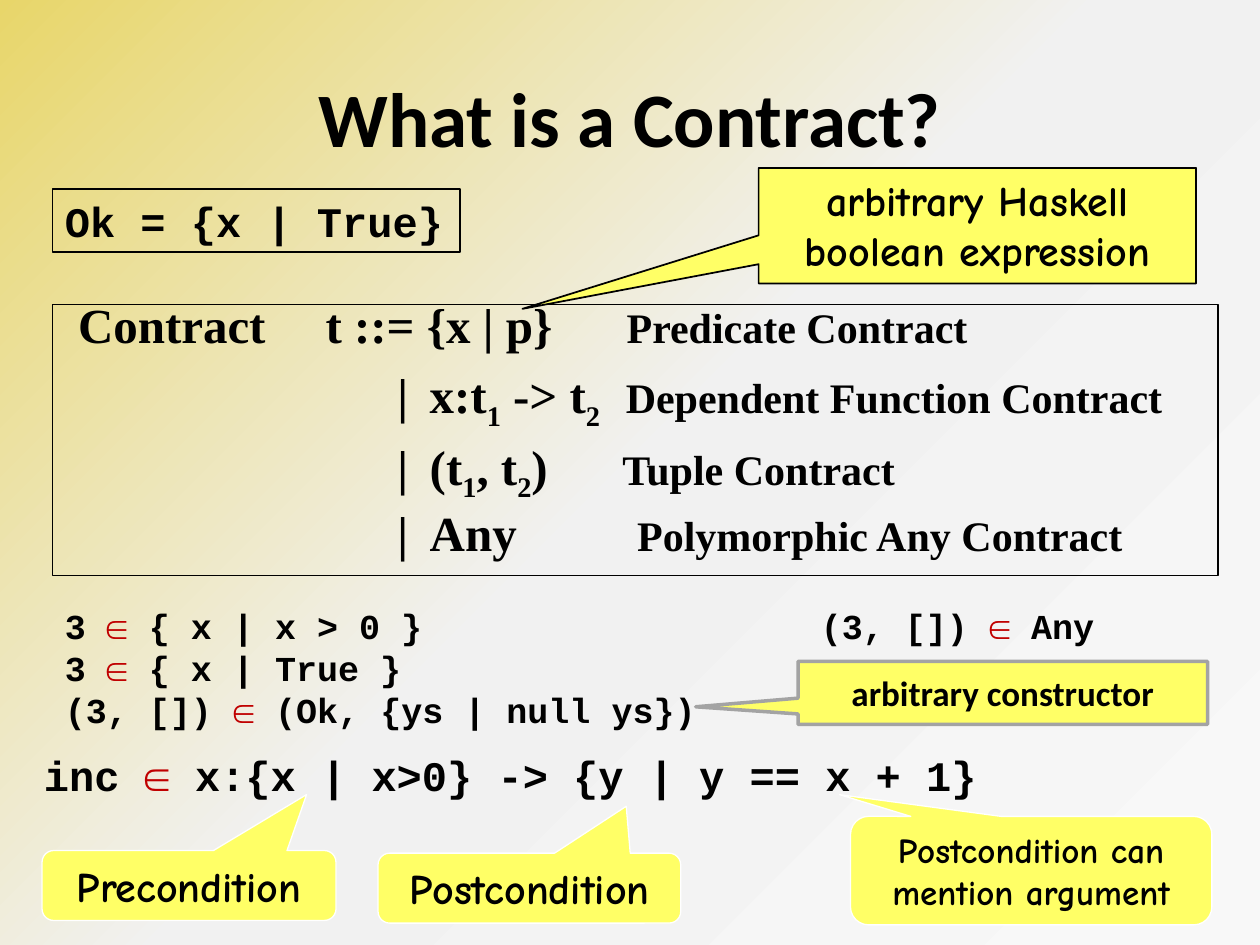
from copy import deepcopy

from pptx import Presentation
from pptx import util as u
from pptx.dml.color import RGBColor
from pptx.enum import shapes, text
from pptx.oxml import ns
from pptx.oxml import xmlchemy

BLACK = RGBColor(0x00, 0x00, 0x00)
WHITE = RGBColor(0xFF, 0xFF, 0xFF)
GREY = RGBColor(0xA3, 0xA3, 0xA3)
RED = RGBColor(0xC0, 0x00, 0x00)
YELLOW = RGBColor(0xFF, 0xFF, 0x66)
BACKGROUND_STOPS = [
    (0, RGBColor(0xE8, 0xD6, 0x6A)),
    (0.5, RGBColor(0xF1, 0xF1, 0xF1)),
    (1, RGBColor(0xF8, 0xF8, 0xF8)),
]

SANS, COMIC, MONO, SERIF = "Calibri", "Comic Neue", "Courier New", "Times New Roman"
RECTANGLE = shapes.MSO_SHAPE.RECTANGLE
SQUARE_CALLOUT = shapes.MSO_SHAPE.RECTANGULAR_CALLOUT
ROUND_CALLOUT = shapes.MSO_SHAPE.ROUNDED_RECTANGULAR_CALLOUT
TOP, MIDDLE = text.MSO_ANCHOR.TOP, text.MSO_ANCHOR.MIDDLE
LEFT, CENTER = text.PP_ALIGN.LEFT, text.PP_ALIGN.CENTER

# Text before the description, the description, and where each part starts.
GRAMMAR = [
    ("\tContract\tt ::= {x | p}", "Predicate Contract", (7.5, 149, 321)),
    ("\t|\tx:t^1^ -> t^2^", "Dependent Function Contract", (190, 208.5, 320.5)),
    ("\t|\t(t^1^, t^2^)", "Tuple Contract", (190, 208.5, 318.5)),
    ("\t|\tAny", "Polymorphic Any Contract", (190, 208.5, 327)),
]
MEMBERSHIPS = [
    "3 ^∈^ { x | x > 0 }\t(3, []) ^∈^ Any",
    "3 ^∈^ { x | True }",
    "(3, []) ^∈^ (Ok, {ys | null ys})",
]


def subscript(run):
    run._r.get_or_add_rPr().set("baseline", "-25000")


def redden(run):
    run.font.color.rgb = RED


def add_marked_runs(paragraph, line, mark):
    """Add the line as runs, applying mark to each part between carets."""
    for index, part in enumerate(line.split("^")):
        if part:
            run = paragraph.add_run()
            run.text = part
            if index % 2:
                mark(run)


def set_tabs(paragraph, positions):
    tab_list = xmlchemy.OxmlElement("a:tabLst")
    for position in positions:
        tab = xmlchemy.OxmlElement("a:tab")
        tab.set("pos", str(u.Pt(position)))
        tab.set("algn", "l")
        tab_list.append(tab)
    paragraph._p.get_or_add_pPr().append(tab_list)


class ContractSlide:
    def __init__(self, presentation):
        self.slide = presentation.slides.add_slide(presentation.slide_layouts[5])

    def background(self, stops):
        fill = self.slide.background.fill
        fill.gradient()
        fill.gradient_angle = 315
        stop_list = self.slide._element.find(".//" + ns.qn("a:gsLst"))
        while len(stop_list) < len(stops):
            stop_list.append(deepcopy(stop_list[0]))
        for stop, (position, color) in zip(fill.gradient_stops, stops):
            stop.position = position
            stop.color.rgb = color

    def style(self, paragraph, font_name, size, align=LEFT):
        paragraph.alignment = align
        font = paragraph.font
        font.name, font.size, font.bold = font_name, u.Pt(size), True
        font.color.rgb = BLACK

    def title(self, words, bounds):
        title = self.slide.shapes.title
        title.left, title.top, title.width, title.height = map(u.Pt, bounds)
        title.text_frame.text = words
        title.text_frame.vertical_anchor = MIDDLE
        self.style(title.text_frame.paragraphs[0], SANS, 44, CENTER)

    def box(self, kind, bounds, line, line_width, fill=None, anchor=TOP):
        shape = self.slide.shapes.add_shape(kind, *map(u.Pt, bounds))
        shape.shadow.inherit = False
        if fill is None:
            shape.fill.background()
        else:
            shape.fill.solid()
            shape.fill.fore_color.rgb = fill
        shape.line.color.rgb = line
        shape.line.width = u.Pt(line_width)
        shape.text_frame.word_wrap = True
        shape.text_frame.vertical_anchor = anchor
        return shape

    def framed_code(self, words, bounds):
        paragraph = self.box(RECTANGLE, bounds, BLACK, 1).text_frame.paragraphs[0]
        paragraph.text = words
        self.style(paragraph, MONO, 24)

    def grammar(self, rows, bounds):
        frame = self.box(RECTANGLE, bounds, BLACK, 0.75).text_frame
        for index, (rule, description, tabs) in enumerate(rows):
            paragraph = frame.add_paragraph() if index else frame.paragraphs[0]
            set_tabs(paragraph, tabs)
            paragraph.line_spacing = 0.7
            paragraph.space_before = u.Pt(14)
            self.style(paragraph, SERIF, 28)
            add_marked_runs(paragraph, rule + "\t", subscript)
            run = paragraph.add_run()
            run.text = description
            run.font.size = u.Pt(24)

    def code(self, lines, bounds, size, tabs=()):
        frame = self.slide.shapes.add_textbox(*map(u.Pt, bounds)).text_frame
        frame.word_wrap = True
        for index, line in enumerate(lines):
            paragraph = frame.add_paragraph() if index else frame.paragraphs[0]
            if tabs:
                set_tabs(paragraph, tabs)
            self.style(paragraph, MONO, size)
            add_marked_runs(paragraph, line, redden)

    def callout(self, words, bounds, tip, kind=ROUND_CALLOUT, font_name=COMIC,
                size=24, line=WHITE, line_width=0.75, anchor=MIDDLE):
        """Add a callout whose tip is a fraction of its size from its centre."""
        shape = self.box(kind, bounds, line, line_width, YELLOW, anchor)
        shape.adjustments[0], shape.adjustments[1] = tip
        paragraph = shape.text_frame.paragraphs[0]
        paragraph.text = words
        self.style(paragraph, font_name, size, CENTER)


def main():
    presentation = Presentation()
    presentation.slide_width, presentation.slide_height = u.Pt(720), u.Pt(540)

    page = ContractSlide(presentation)
    page.background(BACKGROUND_STOPS)
    page.title("What is a Contract?", (36, 21.6, 648, 90))
    page.grammar(GRAMMAR, (30, 174, 666, 155))
    page.code(MEMBERSHIPS, (30, 342, 659, 80), 20, tabs=(432,))
    page.framed_code("Ok = {x | True}", (30, 108, 233, 36))
    page.callout("arbitrary Haskell boolean expression", (433.5, 96, 250, 66),
                 (-1.04, 0.72), SQUARE_CALLOUT, line=BLACK, line_width=1, anchor=TOP)
    page.code(["inc ^∈^ x:{x | x>0} -> {y | y == x + 1}"], (18, 425, 556, 38), 24)
    page.callout("Precondition", (24, 486, 168, 40), (0.4, -1.3))
    page.callout("Postcondition", (216, 487.5, 173, 40), (0.32, -1.17))
    page.callout("Postcondition can mention argument", (486, 466.5, 206.5, 62),
                 (-0.53, -0.7), size=20)
    page.callout("arbitrary constructor", (456, 378, 234, 36), (-0.75, 0.22),
                 SQUARE_CALLOUT, SANS, 20, GREY, 2)
    presentation.save("out.pptx")


if __name__ == "__main__":
    main()
